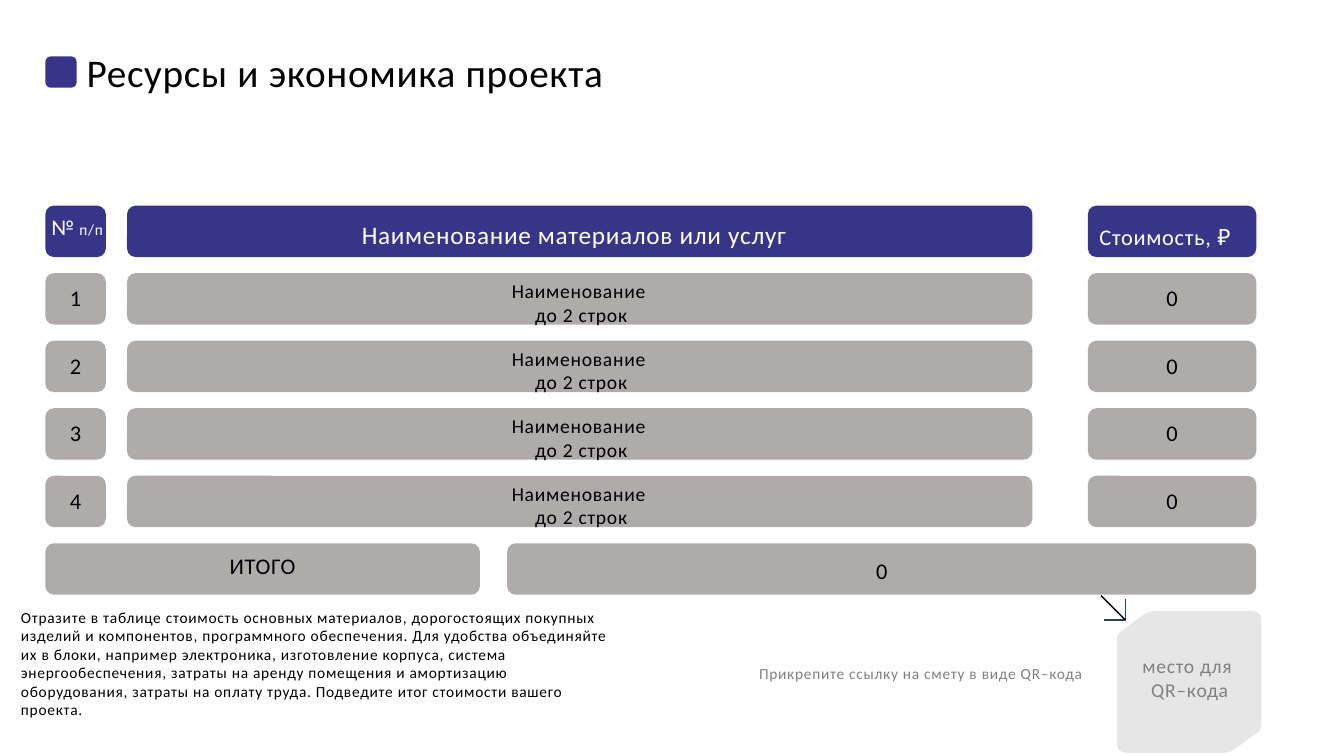
from lxml.etree import SubElement
from pptx import Presentation
from pptx.dml.color import RGBColor
from pptx.enum.shapes import MSO_CONNECTOR, MSO_SHAPE as Kind
from pptx.enum.text import MSO_AUTO_SIZE as Fit, PP_ALIGN as Align
from pptx.oxml.ns import qn
from pptx.util import Inches, Pt

COLORS = {"blue": "373588", "gray": "AFABAB", "pale": "E6E6E6", "dim": "808080",
          "navy": "28445D", "black": "000000", "white": "FFFFFF"}
ROW_H = 0.51
STEP = 0.67


def rgb(name):
    return RGBColor.from_string(COLORS[name])


def paint(shape, color):
    shape.shadow.inherit = False
    shape.fill.solid()
    shape.fill.fore_color.rgb = rgb(color)
    shape.line.fill.background()


def bar(slide, box, color, kind=Kind.FLOWCHART_ALTERNATE_PROCESS):
    paint(slide.shapes.add_shape(kind, *map(Inches, box)), color)


def label(slide, box, lines, size, color="black", align=Align.CENTER, wrap=True):
    """Place text; each line is a list of (text, own size or None)."""
    frame = slide.shapes.add_textbox(*map(Inches, box)).text_frame
    frame.word_wrap = wrap
    frame.auto_size = Fit.SHAPE_TO_FIT_TEXT
    for i, line in enumerate(lines):
        para = frame.add_paragraph() if i else frame.paragraphs[0]
        para.alignment = align
        para.font.name = "Calibri"
        para.font.size = Pt(size)
        para.font.color.rgb = rgb(color)
        for text, own in line:
            run = para.add_run()
            run.text = text
            run.font.name = "Calibri"
            run.font.size = Pt(own or size)
            run.font.color.rgb = rgb(color)
            run._r.get_or_add_rPr().set("spc", "50")


def plain(*lines):
    return [[(line, None)] for line in lines]


def outline(shapes, points, close):
    start, *rest = [(Inches(x), Inches(y)) for x, y in points]
    form = shapes.build_freeform(*start, scale=1.0)
    form.add_line_segments(rest, close=close)
    return form.convert_to_shape()


def title(slide, x, y):
    bar(slide, (x, y + 0.13, 0.31, 0.31), "blue", Kind.ROUNDED_RECTANGLE)
    label(slide, (x + 0.31, y, 5.39, 0.57), plain("Ресурсы и экономика проекта"),
          28, align=Align.LEFT, wrap=False)


def table(slide, x, y):
    # Column offsets and widths
    num, name, cost = (x, 0.6), (x + 0.81, 8.98), (x + 10.34, 1.67)
    # Header row
    for left, width in (num, name, cost):
        bar(slide, (left, y, width, ROW_H), "blue")
    label(slide, (x - 0.08, y + 0.03, 0.79, 0.37),
          [[("№", None), (" ", 12), ("п/п", 11)]], 16, "white")
    label(slide, (x + 0.92, y + 0.09, 8.65, 0.4),
          plain("Наименование материалов или услуг"), 18, "white")
    label(slide, (cost[0] - 0.07, y + 0.12, cost[1], 0.37),
          plain("Стоимость, ₽"), 16, "white")
    # Item rows
    for i in range(1, 5):
        top = y + STEP * i
        for left, width in (num, name, cost):
            bar(slide, (left, top, width, ROW_H), "gray")
        for (left, width), text in ((num, str(i)), (cost, "0")):
            label(slide, (left, top + 0.06, width, 0.37), plain(text), 16)
        label(slide, (x + 1.06, top + 0.01, 8.51, 0.57),
              plain("Наименование ", "до 2 строк"), 14)
    # Total row
    top = y + STEP * 5
    for left, width, text, drop in ((x, 4.31, "ИТОГО", 0.04), (x + 4.58, 7.43, "0", 0.09)):
        bar(slide, (left, top, width, ROW_H), "gray")
        label(slide, (left, top + drop, width, 0.37), plain(text), 16)


def hint(slide, x, y):
    label(slide, (x, y, 6.03, 1.21), plain(
        "Отразите в таблице стоимость основных материалов, дорогостоящих покупных "
        "изделий и компонентов, программного обеспечения. Для удобства объединяйте "
        "их в блоки, например электроника, изготовление корпуса, система "
        "энергообеспечения, затраты на аренду помещения и амортизацию оборудования, "
        "затраты на оплату труда. Подведите итог стоимости вашего проекта."),
        11, align=Align.LEFT)


def code(slide, x, y):
    label(slide, (x - 3.65, y + 0.48, 3.6, 0.29),
          plain("Прикрепите ссылку на смету в виде QR–кода"), 11, "dim", Align.LEFT)
    # Plate with two cut corners, symmetric about its centre
    w, h = 1.43, 1.41
    half = [(0, 1.33), (0, 0.27), (0.01, 0.23), (0.03, 0.21), (0.29, 0.02),
            (0.32, 0.01), (0.37, 0), (1.33, 0), (1.38, 0.01), (1.42, 0.04)]
    turn = [(w - dx, h - dy) for dx, dy in half]
    plate = outline(slide.shapes, [(x + dx, y + dy) for dx, dy in half + turn], True)
    paint(plate, "pale")
    label(slide, (x - 0.1, y + 0.38, 1.64, 0.57),
          plain("место для ", "QR–кода"), 14, "dim")
    # Arrow pointing at the plate
    group = slide.shapes.add_group_shape()
    tip_x, tip_y = x + 0.08, y + 0.09
    head = outline(group.shapes, [(tip_x - 0.21, tip_y), (tip_x, tip_y),
                                  (tip_x, tip_y - 0.21)], False)
    head.shadow.inherit = False
    head.fill.background()
    shaft = group.shapes.add_connector(
        MSO_CONNECTOR.STRAIGHT,
        *map(Inches, (tip_x - 0.24, tip_y - 0.24, tip_x, tip_y)))
    SubElement(shaft._element.spPr, qn("a:effectLst"))
    for part, color in ((head, "navy"), (shaft, "black")):
        part.line.color.rgb = rgb(color)
        part.line.width = Pt(1)
    # Effects come after the line in the shape properties
    props = shaft._element.spPr
    props.append(props.find(qn("a:effectLst")))


def main():
    deck = Presentation()
    deck.slide_width, deck.slide_height = Inches(13.33), Inches(7.5)
    slide = deck.slides.add_slide(deck.slide_layouts[6])
    title(slide, 0.45, 0.43)
    table(slide, 0.45, 2.04)
    hint(slide, 0.11, 5.98)
    code(slide, 11.08, 6.06)
    deck.save("out.pptx")


if __name__ == "__main__":
    main()
